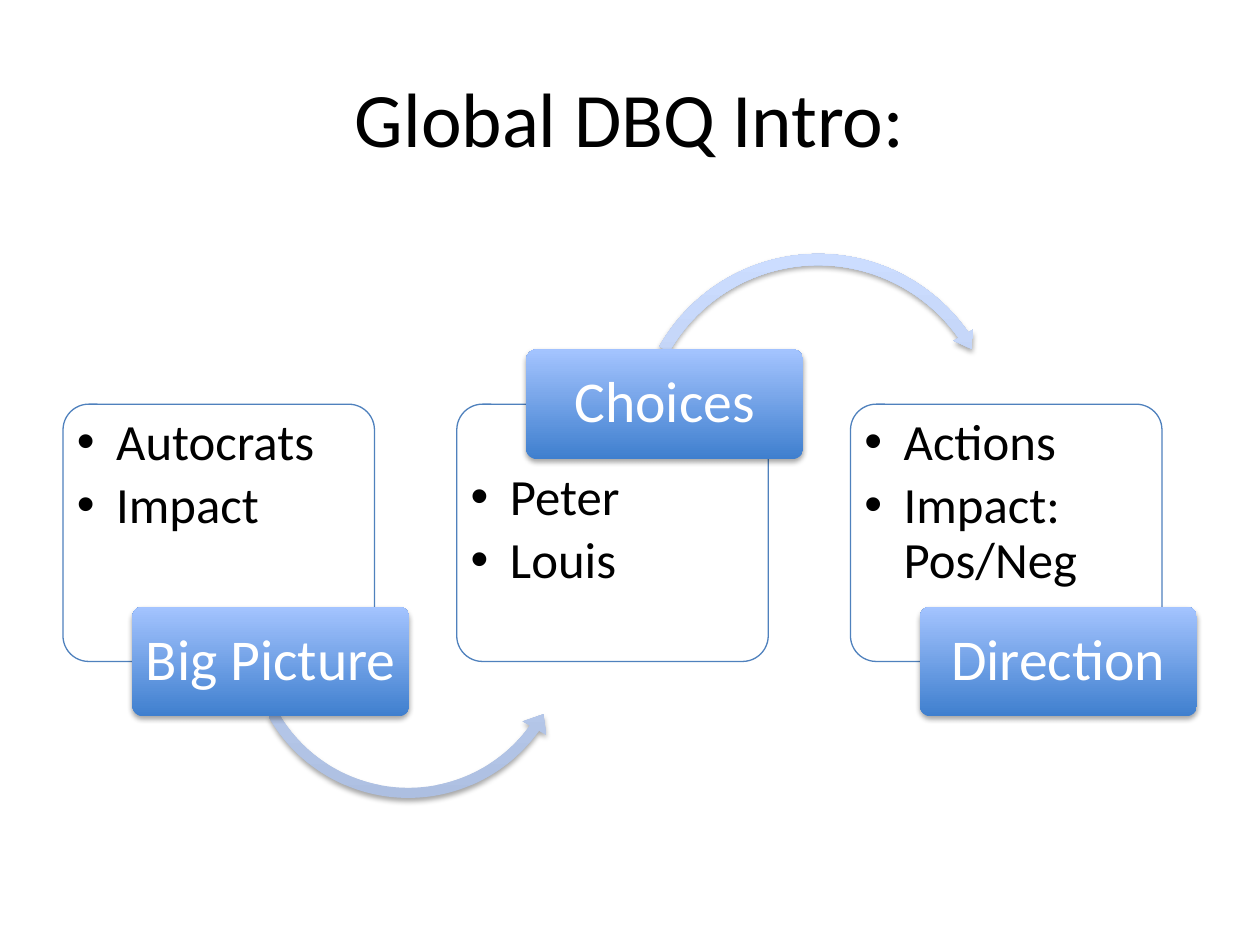
from lxml import etree
from pptx import Presentation
from pptx.dml.color import RGBColor
from pptx.enum import shapes, text
from pptx.oxml.ns import qn
from pptx.util import Pt

FONT = "Calibri"
COLORS = {
    "text": "000000", "label_text": "FFFFFF",
    "panel": "FFFFFF", "panel_line": "4F81BD",
    "label_dark": "3F7FCE", "label_light": "A4C4FF",
    "arrow_dark": "ADBFE1", "arrow_light": "CCDDFF",
}
PANEL_W, PANEL_H = 178, 147
LABEL_W, LABEL_H, LABEL_DX = 158.4, 62.8, 39.6
LEFT, TOP, STEP_X = 36, 231, 225
SHAPE = shapes.MSO_SHAPE

STEPS = [
    ("Big Picture", ["Autocrats", "Impact"], False),
    ("Choices", ["Peter", "Louis"], True),
    ("Direction", ["Actions", "Impact: Pos/Neg"], False),
]
ARROWS = [
    (SHAPE.LEFT_CIRCULAR_ARROW, 197.3, 133.3, 193, (0.03, 3.64, 21.39, 90.25, 0.04)),
    (SHAPE.CIRCULAR_ARROW, 206.6, 18.5, 215.3, (0.03, 3.23, 195.02, 125.76, 0.03)),
]


def rgb(name):
    return RGBColor.from_string(COLORS[name])


def add_run(p, words, size, color):
    r = p.add_run()
    r.text = words
    r.font.name, r.font.size = FONT, Pt(size)
    r.font.color.rgb = rgb(color)


def set_frame(tf, anchor, left, top, right, bottom):
    tf.word_wrap = True
    tf.vertical_anchor = anchor
    tf.margin_left, tf.margin_top = Pt(left), Pt(top)
    tf.margin_right, tf.margin_bottom = Pt(right), Pt(bottom)


def add_bullet(p):
    pPr = p._p.get_or_add_pPr()
    pPr.set("marL", str(Pt(22.5)))
    pPr.set("indent", str(-Pt(22.5)))
    etree.SubElement(pPr, qn("a:buFont"), typeface="Arial")
    etree.SubElement(pPr, qn("a:buChar"), char="•")


def add_shape(s, kind, x, y, w, h):
    sp = s.shapes.add_shape(kind, Pt(x), Pt(y), Pt(w), Pt(h))
    sp.shadow.inherit = False
    return sp


def style_raised(sp, dark, light):
    sp.fill.gradient()
    sp.fill.gradient_angle = 90
    for stop, name in zip(sp.fill.gradient_stops, (dark, light)):
        stop.color.rgb = rgb(name)
    sp.line.fill.background()
    effects = sp._element.spPr.find(qn("a:effectLst"))
    shadow = etree.SubElement(effects, qn("a:outerShdw"), blurRad=str(Pt(3.1)),
                              dist=str(Pt(1.8)), dir="5400000", rotWithShape="0")
    color = etree.SubElement(shadow, qn("a:srgbClr"), val="000000")
    etree.SubElement(color, qn("a:alpha"), val="35000")


def add_title(s, words, x, y, w, h):
    sp = s.shapes.title
    sp.left, sp.top, sp.width, sp.height = Pt(x), Pt(y), Pt(w), Pt(h)
    tf = sp.text_frame
    tf.vertical_anchor = text.MSO_ANCHOR.MIDDLE
    p = tf.paragraphs[0]
    p.alignment = text.PP_ALIGN.CENTER
    add_run(p, words, 44, "text")


def add_panel(s, items, x, y, text_drop):
    sp = add_shape(s, SHAPE.ROUNDED_RECTANGLE, x, y, PANEL_W, PANEL_H)
    sp.adjustments[0] = 0.1
    sp.fill.solid()
    sp.fill.fore_color.rgb = rgb("panel")
    color = sp._element.spPr.find(qn("a:solidFill")).find(qn("a:srgbClr"))
    etree.SubElement(color, qn("a:alpha"), val="90000")
    sp.line.color.rgb = rgb("panel_line")
    sp.line.width = Pt(0.75)
    tf = sp.text_frame
    set_frame(tf, text.MSO_ANCHOR.TOP, 3.6, 3 + text_drop, 3.6, 3)
    for i, item in enumerate(items):
        p = tf.add_paragraph() if i else tf.paragraphs[0]
        p.alignment = text.PP_ALIGN.LEFT
        p.line_spacing, p.space_after = 0.9, Pt(4.35)
        add_bullet(p)
        add_run(p, item, 29, "text")


def add_label(s, words, x, y):
    sp = add_shape(s, SHAPE.ROUNDED_RECTANGLE, x, y, LABEL_W, LABEL_H)
    sp.adjustments[0] = 0.1
    style_raised(sp, "label_dark", "label_light")
    tf = sp.text_frame
    set_frame(tf, text.MSO_ANCHOR.MIDDLE, 4.8, 3.6, 4.8, 3.6)
    p = tf.paragraphs[0]
    p.alignment = text.PP_ALIGN.CENTER
    p.line_spacing = 0.9
    add_run(p, words, 33, "label_text")


def add_arrow(s, x, y, kind, center_x, center_y, size, adjustments):
    sp = add_shape(s, kind, x + center_x - size / 2, y + center_y - size / 2, size, size)
    for i, value in enumerate(adjustments):
        sp.adjustments[i] = value
    style_raised(sp, "arrow_dark", "arrow_light")


def add_step(s, x, y, label, items, label_on_top, arrow):
    add_panel(s, items, x, y, LABEL_H / 2 if label_on_top else 0)
    if arrow:
        add_arrow(s, x, y, *arrow)
    edge = y if label_on_top else y + PANEL_H
    add_label(s, label, x + LABEL_DX, edge - LABEL_H / 2)


def main():
    prs = Presentation()
    prs.slide_width, prs.slide_height = Pt(720), Pt(540)
    s = prs.slides.add_slide(prs.slide_layouts[5])
    add_title(s, "Global DBQ Intro:", 36, 21.6, 648, 90)
    for i, step in enumerate(STEPS):
        arrow = ARROWS[i] if i < len(ARROWS) else None
        add_step(s, LEFT + i * STEP_X, TOP, *step, arrow)
    prs.save("out.pptx")


if __name__ == "__main__":
    main()
